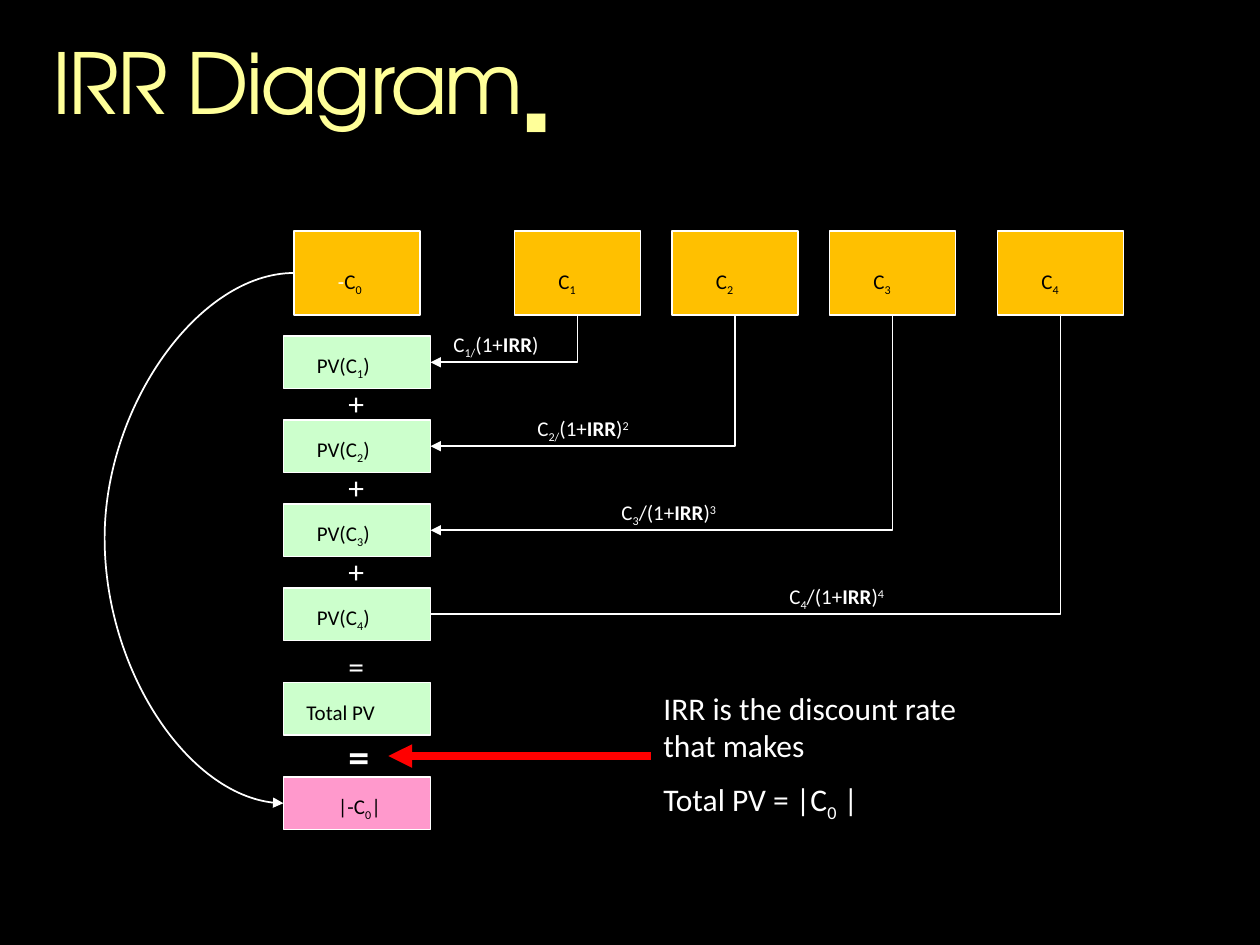
from lxml import etree
from pptx import Presentation
from pptx.dml.color import RGBColor
from pptx.enum.shapes import MSO_CONNECTOR, MSO_SHAPE
from pptx.enum.text import MSO_ANCHOR, MSO_AUTO_SIZE, PP_ALIGN
from pptx.oxml.ns import qn
from pptx.util import Emu, Pt

PROCESS = MSO_SHAPE.FLOWCHART_PROCESS
STRAIGHT, ELBOW, CURVE = MSO_CONNECTOR.STRAIGHT, MSO_CONNECTOR.ELBOW, MSO_CONNECTOR.CURVE
TOP, LEFT, GROW = MSO_ANCHOR.TOP, PP_ALIGN.LEFT, MSO_AUTO_SIZE.SHAPE_TO_FIT_TEXT
PX_EMU = 7620
BLACK, WHITE, RED = "000000", "FFFFFF", "FF0000"
ORANGE, GREEN, PINK, YELLOW = "FFC000", "CCFFCC", "FF99CC", "FFFF99"
BASELINES = {"_": "-25000", "^": "30000"}


def px(*lengths):
    """Turn px lengths into EMU."""
    return [Emu(round(length * PX_EMU)) for length in lengths]


def rgb(hex_code):
    """Return the colour for a hex string."""
    return RGBColor.from_string(hex_code)


def write(frame, text, size=12, color=BLACK, font="Calibri", bold=False, gap=0, leading=None, tracking=None):
    """Write lines split into runs by ~, led by _ sub, ^ super, * bold or ! white."""
    frame.word_wrap = True
    frame.auto_size = GROW
    frame.vertical_anchor = TOP
    for index, line in enumerate(text.split("\n")):
        paragraph = frame.add_paragraph() if index else frame.paragraphs[0]
        paragraph.alignment = LEFT
        paragraph.space_before = Pt(gap if index else 0)
        if leading:
            paragraph.line_spacing = leading
        for piece in line.split("~"):
            mark = piece[0] if piece[0] in "_^*!" else ""
            run = paragraph.add_run()
            run.text = piece[len(mark):]
            run.font.name = font
            run.font.size = Pt(size)
            run.font.bold = bold or mark == "*"
            run.font.color.rgb = rgb(WHITE if mark == "!" else color)
            properties = run.font._element
            if mark in BASELINES:
                properties.set("baseline", BASELINES[mark])
            if tracking:
                properties.set("spc", str(tracking))


def add_label(slide, box, text, **style):
    """Add a text box."""
    write(slide.shapes.add_textbox(*px(*box)).text_frame, text, **style)


def add_process(slide, box, fill):
    """Add a white-edged process box."""
    process = slide.shapes.add_shape(PROCESS, *px(*box))
    process.shadow.inherit = False
    process.fill.solid()
    process.fill.fore_color.rgb = rgb(fill)
    process.line.color.rgb = rgb(WHITE)
    process.line.width = Pt(1)


def add_link(slide, kind, start, end, color=WHITE, width=1, arrow=True):
    """Add a connector with an optional arrowhead."""
    link = slide.shapes.add_connector(kind, *px(*start, *end))
    link.line.color.rgb = rgb(color)
    link.line.width = Pt(width)
    properties = link._element.spPr
    if arrow:
        etree.SubElement(properties.find(qn("a:ln")), qn("a:tailEnd"), type="triangle")
    etree.SubElement(properties, qn("a:effectLst"))
    return link


def add_down_left(slide, start, end, arrow):
    """Add an elbow that runs down and then left."""
    link = add_link(slide, ELBOW, start, end, arrow=arrow)
    across, down = start[0] - end[0], end[1] - start[1]
    middle, center = (start[0] + end[0]) / 2, (start[1] + end[1]) / 2
    link.left, link.top, link.width, link.height = px(
        middle - down / 2, center - across / 2, down, across)
    properties = link._element.spPr
    transform = properties.find(qn("a:xfrm"))
    transform.attrib.pop("flipH", None)
    transform.set("rot", "5400000")
    properties.find(qn("a:prstGeom")).set("prst", "bentConnector2")


def add_title(slide, box):
    """Place and write the title."""
    title = slide.shapes.title
    title.left, title.top, title.width, title.height = px(*box)
    frame = title.text_frame
    frame.margin_left = frame.margin_top = frame.margin_right = frame.margin_bottom = 0
    write(frame, "IRR Diagram~_▪", size=48, color=YELLOW,
          font="TeX Gyre Adventor", leading=0.9, tracking=-150)


def add_cash_flows(slide, left, top):
    """Add the row of cash flows and return the bottom centre of each."""
    ports = []
    for period, offset in enumerate((0, 210, 360, 510, 670)):
        x = left + offset
        add_process(slide, (x, top, 120, 80), ORANGE)
        sign = "" if period else "!-~"
        add_label(slide, (x + 30, top + 30, 60, 36), f"{sign}C~_{period}")
        ports.append((x + 60, top + 80))
    return ports


def add_present_values(slide, left, top, ports):
    """Add the present values, their discount formulas and links."""
    formulas = (
        (150, "C~_1/~(1+~*IRR~)"),
        (230, "C~_2/~(1+~*IRR~)~^2"),
        (310, "C~_3~/(1+~*IRR~)~^3"),
        (470, "C~_4~/(1+~*IRR~)~^4"),
    )
    last = len(formulas)
    for period, (offset, formula) in enumerate(formulas, 1):
        y = top + 80 * (period - 1)
        add_process(slide, (left, y, 140, 50), GREEN)
        add_label(slide, (left + 20, y + 10, 90, 36), f"PV(C~_{period}~)")
        add_down_left(slide, ports[period], (left + 140, y + 25), period < last)
        add_label(slide, (left + offset, y - 10, 140, 36), formula, color=WHITE)
        if period < last:
            add_label(slide, (left + 50, y + 40, 40, 48), "+", size=18, color=WHITE)


def add_balance(slide, left, top):
    """Add the total, its equality with the outlay and the explanation."""
    add_label(slide, (left + 50, top - 40, 40, 48), "=", size=18, color=WHITE)
    add_process(slide, (left, top, 140, 50), GREEN)
    add_label(slide, (left + 10, top + 10, 130, 36), "Total PV")
    add_label(slide, (left + 50, top + 40, 40, 60), "=", size=24, color=WHITE, bold=True)
    add_process(slide, (left, top + 90, 140, 50), PINK)
    add_label(slide, (left + 40, top + 100, 70, 36), "|-C~_0~|")
    add_label(slide, (left + 350, top, 330, 138),
              "IRR is the discount rate that makes\nTotal PV = |C~_0~ |",
              size=18, color=WHITE, gap=9)
    add_link(slide, STRAIGHT, (left + 350, top + 70), (left + 100, top + 70), RED, 4.5)


def add_outlay_curve(slide, start, end, bulge):
    """Link the outlay to its absolute value by a curve bulging left."""
    curve = add_link(slide, CURVE, start, end)
    adjustments = curve._element.spPr.find(qn("a:prstGeom")).get_or_add_avLst()
    ratio = round(100000 * bulge / (start[0] - end[0]))
    etree.SubElement(adjustments, qn("a:gd"), name="adj1", fmla=f"val {ratio}")


def main():
    """Build and save the slide."""
    deck = Presentation()
    deck.slide_width, deck.slide_height = px(1200, 900)
    slide = deck.slides.add_slide(deck.slide_layouts[5])
    slide.background.fill.solid()
    slide.background.fill.fore_color.rgb = rgb(BLACK)
    add_title(slide, (50, 30, 1100, 88))
    ports = add_cash_flows(slide, 280, 220)
    add_present_values(slide, 270, 320, ports)
    add_balance(slide, 270, 650)
    add_outlay_curve(slide, (280, 260), (270, 765), 180)
    deck.save("out.pptx")


if __name__ == "__main__":
    main()
